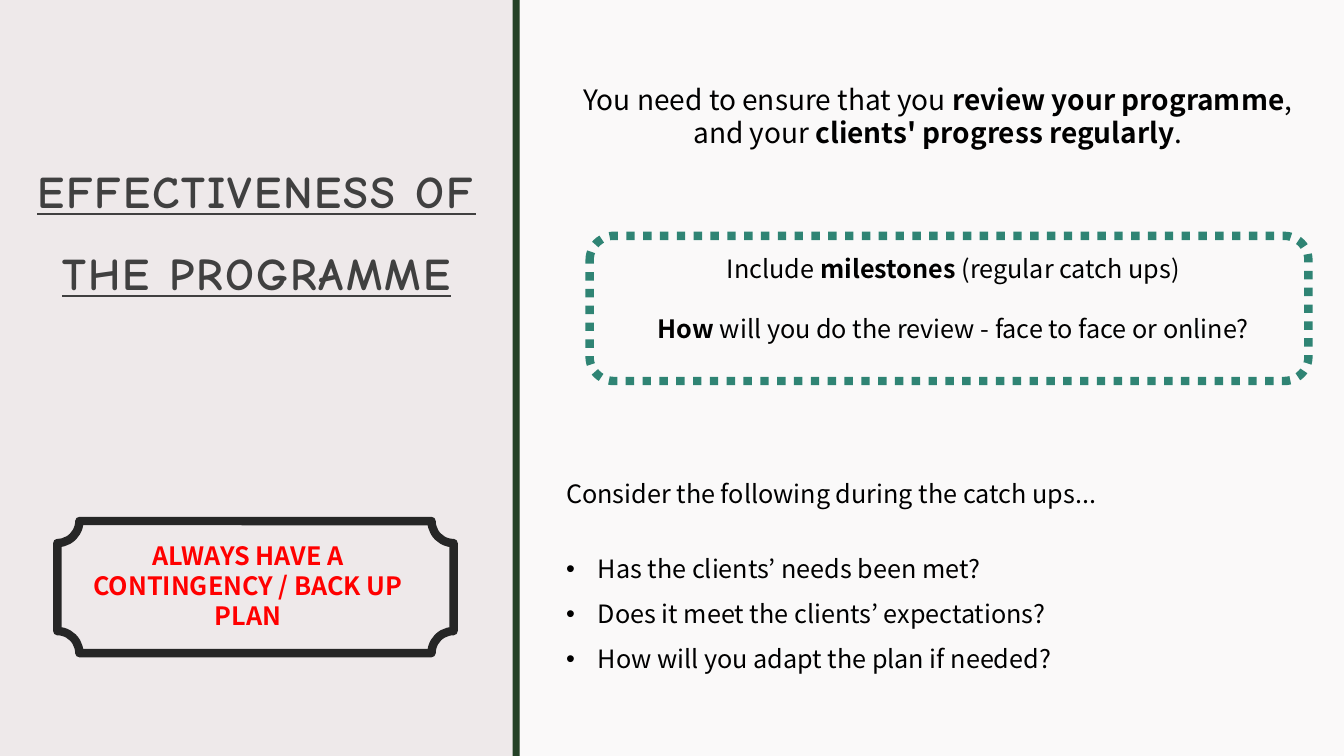
import pptx
import pptx.dml.color
import pptx.enum.dml
import pptx.enum.shapes
import pptx.enum.text
import pptx.oxml
import pptx.oxml.ns
import pptx.util

Pt = pptx.util.Pt
SHAPES = pptx.enum.shapes.MSO_SHAPE
ALIGN = pptx.enum.text.PP_ALIGN
ANCHOR = pptx.enum.text.MSO_ANCHOR
DASH = pptx.enum.dml.MSO_LINE

BODY_FONT = "Noto Sans CJK JP"
LINE_RATIO = 1.19
BODY_LINE = 18 * LINE_RATIO


def color(hex_value):
    return pptx.dml.color.RGBColor.from_string(hex_value)


def apply_format(target, values):
    for name, value in values.items():
        setattr(target, name, value)


def paint(fill, hex_value):
    fill.solid()
    fill.fore_color.rgb = color(hex_value)


def add_block(slide, box, hex_value, opacity=100):
    shape = slide.shapes.add_shape(SHAPES.RECTANGLE, *map(Pt, box))
    shape.shadow.inherit = False
    shape.line.fill.background()
    paint(shape.fill, hex_value)
    if opacity < 100:
        fill_color = shape.fill._xPr.find(".//" + pptx.oxml.ns.qn("a:srgbClr"))
        alpha = pptx.oxml.parse_xml(
            f'<a:alpha {pptx.oxml.ns.nsdecls("a")} val="{opacity * 1000}"/>')
        fill_color.append(alpha)


def add_frame(slide, kind, box, hex_value, line_format):
    shape = slide.shapes.add_shape(kind, *map(Pt, box))
    shape.shadow.inherit = False
    shape.fill.background()
    shape.line.color.rgb = color(hex_value)
    apply_format(shape.line, line_format)


def add_text_box(slide, box, frame_format=None):
    frame = slide.shapes.add_textbox(*map(Pt, box)).text_frame
    apply_format(frame, {"word_wrap": True, **(frame_format or {})})
    return frame


def add_paragraph(frame, runs, paragraph_format, font_format, hex_value="000000"):
    paragraph = frame.paragraphs[0]
    if paragraph.runs:
        paragraph = frame.add_paragraph()
    apply_format(paragraph, paragraph_format)
    for text, bold in runs:
        run = paragraph.add_run()
        run.text = text
        apply_format(run.font, {**font_format, "bold": bold})
        run.font.color.rgb = color(hex_value)
    return paragraph


def add_body(frame, runs, size=18, align=ALIGN.LEFT, before=0, spacing=1, hex_value="000000"):
    paragraph_format = {
        "alignment": align,
        "line_spacing": Pt(size * LINE_RATIO * spacing),
        "space_before": Pt(before),
    }
    font_format = {"name": BODY_FONT, "size": Pt(size)}
    return add_paragraph(frame, runs, paragraph_format, font_format, hex_value)


def add_bullet(frame, text, before):
    paragraph = add_body(frame, [(text, False)], before=before, spacing=1.5)
    properties = paragraph._p.get_or_add_pPr()
    properties.set("marL", str(Pt(22.5)))
    properties.set("indent", str(Pt(-22.5)))
    namespace = pptx.oxml.ns.nsdecls("a")
    properties.append(pptx.oxml.parse_xml(f'<a:buFont {namespace} typeface="Arial"/>'))
    properties.append(pptx.oxml.parse_xml(f'<a:buChar {namespace} char="•"/>'))


def add_title(slide, box, text):
    frame = add_text_box(slide, box, {
        "vertical_anchor": ANCHOR.MIDDLE,
        "margin_left": Pt(8.64),
        "margin_right": Pt(8.64),
        "margin_top": Pt(8.64),
        "margin_bottom": Pt(7.2),
    })
    paragraph = add_paragraph(
        frame, [(text, True)],
        {"alignment": ALIGN.CENTER, "line_spacing": 1.5},
        {"name": "Comic Neue", "size": Pt(32.4), "underline": True},
        "404040")
    paragraph.runs[0]._r.get_or_add_rPr().set("spc", "150")


def main():
    presentation = pptx.Presentation()
    apply_format(presentation, {"slide_width": Pt(960), "slide_height": Pt(540)})
    slide = presentation.slides.add_slide(presentation.slide_layouts[6])
    paint(slide.background.fill, "EEE9EA")

    add_block(slide, (371.5, 0, 588.5, 540), "FFFFFF", opacity=75)
    add_block(slide, (366.2, 0, 5, 540), "244126")
    add_title(slide, (0, 55.4, 366.5, 198.7), "EFFECTIVENESS OF THE PROGRAMME")

    review = add_text_box(slide, (397.4, 55.4, 545, 55.4))
    add_body(review, [
        ("You need to ensure that you ", False),
        ("review your programme", True),
        (", and your ", False),
        ("clients' progress regularly", True),
        (".", False),
    ], size=20, align=ALIGN.CENTER)

    milestones = add_text_box(slide, (443.5, 177.8, 475.2, 94.3))
    add_body(milestones, [
        ("Include ", False),
        ("milestones", True),
        (" (regular catch ups)", False),
    ], align=ALIGN.CENTER)
    add_body(milestones, [
        ("How", True),
        (" will you do the review - face to face or online?", False),
    ], align=ALIGN.CENTER, before=BODY_LINE)

    questions = add_text_box(slide, (397.4, 338.4, 521.3, 146.2))
    add_body(questions, [("Consider the following during the catch ups...", False)])
    for index, question in enumerate((
        "Has the clients’ needs been met?",
        "Does it meet the clients’ expectations?",
        "How will you adapt the plan if needed?",
    )):
        add_bullet(questions, question, before=0 if index else BODY_LINE)

    add_frame(slide, SHAPES.ROUNDED_RECTANGLE, (421.2, 168.5, 513.4, 103.7), "2F8474",
              {"width": Pt(6), "dash_style": DASH.ROUND_DOT})
    add_frame(slide, SHAPES.PLAQUE, (41, 372.2, 283, 94.3), "262626", {"width": Pt(6)})

    contingency = add_text_box(slide, (41, 382.3, 272.2, 72.7))
    add_body(contingency, [("ALWAYS HAVE A CONTINGENCY / BACK UP PLAN", True)],
             align=ALIGN.CENTER, hex_value="FF0000")

    presentation.save("out.pptx")


if __name__ == "__main__":
    main()
